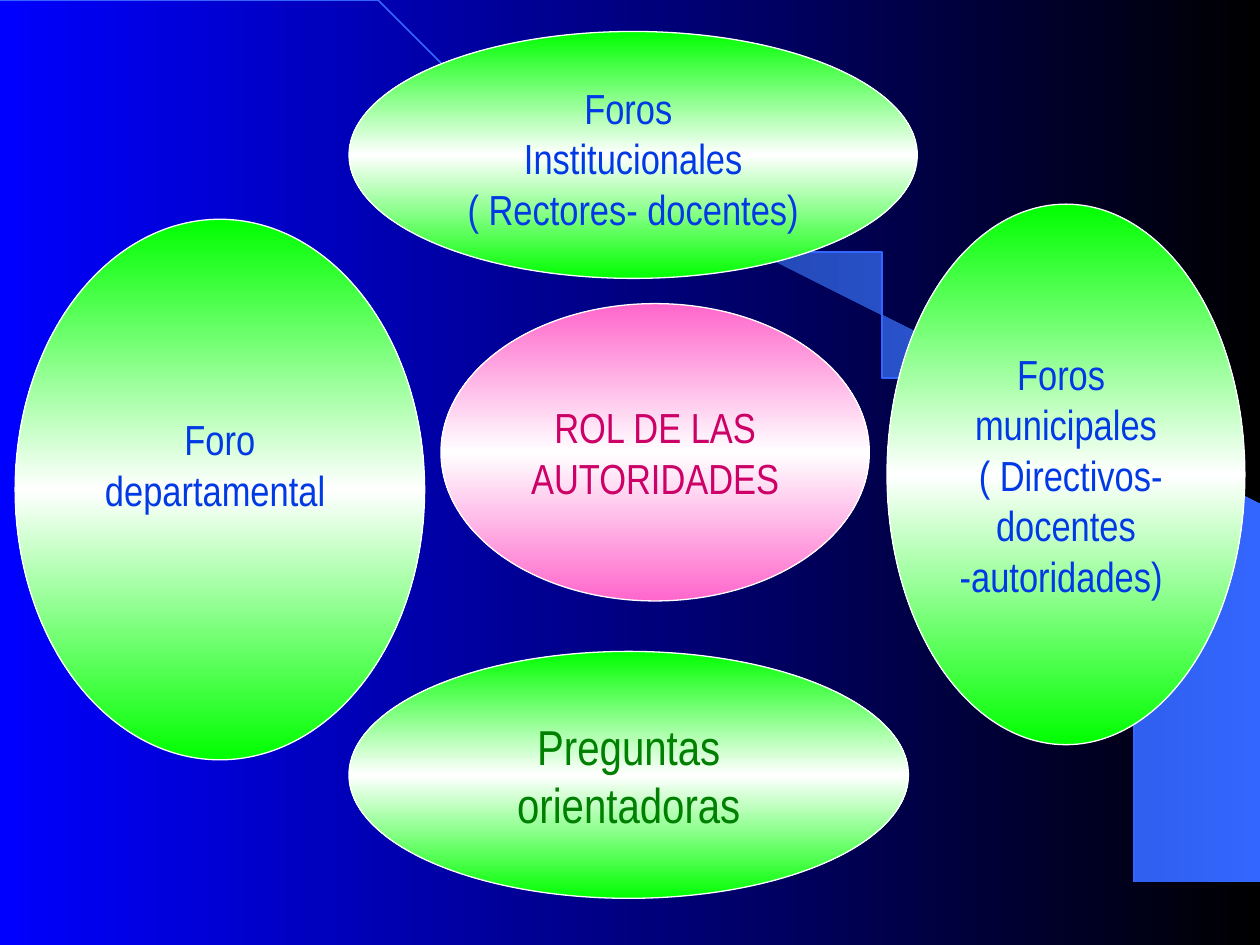
from copy import deepcopy
from math import asin, cos, pi, sin

from pptx import Presentation
from pptx.dml.color import RGBColor
from pptx.enum.shapes import MSO_SHAPE
from pptx.enum.text import MSO_ANCHOR, PP_ALIGN
from pptx.oxml.ns import qn
from pptx.util import Inches, Pt

BLUE = RGBColor(0x00, 0x00, 0xFF)
BLACK = RGBColor(0x00, 0x00, 0x00)
WHITE = RGBColor(0xFF, 0xFF, 0xFF)
DEEP_BLUE = RGBColor(0x24, 0x49, 0xB6)
SKY_BLUE = RGBColor(0x33, 0x66, 0xFF)
GREEN = RGBColor(0x00, 0xFF, 0x00)
PINK = RGBColor(0xFF, 0x66, 0xCC)
TEXT_BLUE = RGBColor(0x00, 0x39, 0xE5)
TEXT_GREEN = RGBColor(0x00, 0x80, 0x00)
TEXT_PINK = RGBColor(0xCC, 0x00, 0x66)

ARC_WIDTH, ARC_HEIGHT = 9.2, 7.49
WEDGE_TIP = (5.89, 1.73)
WEDGE_RIGHT, WEDGE_CORNER = 9.99, 4.23

ROLE = ["ROL DE LAS AUTORIDADES"]
INSTITUTIONS = ["Foros ", "Institucionales", " ( Rectores- docentes) "]
DEPARTMENT = ["Foro", "departamental "]
QUESTIONS = ["Preguntas orientadoras"]
TOWNS = ["Foros ", "municipales", " ( Directivos- docentes -autoridades) "]

OVALS = [
    (3.5, 2.41, 3.4, 2.36, PINK, ROLE, 24, TEXT_PINK, {}),
    (2.77, 0.25, 4.51, 1.96, GREEN, INSTITUTIONS, 24, TEXT_BLUE,
     {"word_wrap": False, "margin_top": Inches(0.1)}),
    (0.12, 1.74, 3.25, 4.29, GREEN, DEPARTMENT, 24, TEXT_BLUE,
     {"margin_bottom": Inches(0.45)}),
    (2.77, 5.17, 4.44, 1.96, GREEN, QUESTIONS, 28, TEXT_GREEN, {}),
    (7.04, 1.62, 2.84, 4.29, GREEN, TOWNS, 24, TEXT_BLUE, {}),
]


def set_attributes(target, values):
    for name, value in values.items():
        setattr(target, name, value)


def set_gradient(fill, colors, angle):
    fill.gradient_angle = angle
    for index, (stop, color) in enumerate(zip(fill.gradient_stops, colors)):
        stop.position = index / (len(colors) - 1)
        stop.color.rgb = color


def arc_points(start, steps=60):
    angles = (start + (pi / 2 - start) * step / steps for step in range(steps + 1))
    return [(ARC_WIDTH * sin(a), ARC_HEIGHT * (1 - cos(a))) for a in angles]


def add_outline(slide, points, close):
    builder = slide.shapes.build_freeform(*points[0], scale=Inches(1))
    builder.add_line_segments(points[1:], close=close)
    outline = builder.convert_to_shape()
    outline.shadow.inherit = False
    return outline


def add_wedge(slide):
    curve = arc_points(asin(WEDGE_TIP[0] / ARC_WIDTH))
    edge = [(WEDGE_RIGHT, ARC_HEIGHT), (WEDGE_RIGHT, WEDGE_CORNER), WEDGE_TIP]
    wedge = add_outline(slide, curve + edge, True)
    wedge.line.fill.background()
    wedge.fill.gradient()
    set_gradient(wedge.fill, [DEEP_BLUE, SKY_BLUE], 0)


def add_arc(slide):
    arc = add_outline(slide, arc_points(0), False)
    arc.fill.background()
    arc.line.color.rgb = SKY_BLUE
    arc.line.width = Pt(1)


def add_oval(slide, left, top, width, height, rim, lines, size, color, frame_format):
    box = map(Inches, (left, top, width, height))
    oval = slide.shapes.add_shape(MSO_SHAPE.OVAL, *box)
    oval.shadow.inherit = False
    oval.fill.gradient()
    stops = oval._element.spPr.find(".//" + qn("a:gsLst"))
    stops.insert(1, deepcopy(stops[0]))
    set_gradient(oval.fill, [rim, WHITE, rim], 90)
    oval.line.color.rgb = WHITE
    oval.line.width = Pt(0.75)

    frame = oval.text_frame
    set_attributes(frame, {"word_wrap": True, "vertical_anchor": MSO_ANCHOR.MIDDLE,
                           **frame_format})
    frame.text = "\n".join(lines)
    for paragraph in frame.paragraphs:
        paragraph.alignment = PP_ALIGN.CENTER
        font = paragraph.runs[0].font
        set_attributes(font, {"name": "Arial Narrow", "size": Pt(size)})
        font.color.rgb = color


def main():
    deck = Presentation()
    set_attributes(deck, {"slide_width": Inches(10), "slide_height": Inches(7.5)})
    slide = deck.slides.add_slide(deck.slide_layouts[6])
    backdrop = slide.background.fill
    backdrop.gradient()
    set_gradient(backdrop, [BLUE, BLACK], 0)
    add_wedge(slide)
    add_arc(slide)
    for oval in OVALS:
        add_oval(slide, *oval)
    deck.save("out.pptx")


if __name__ == "__main__":
    main()
